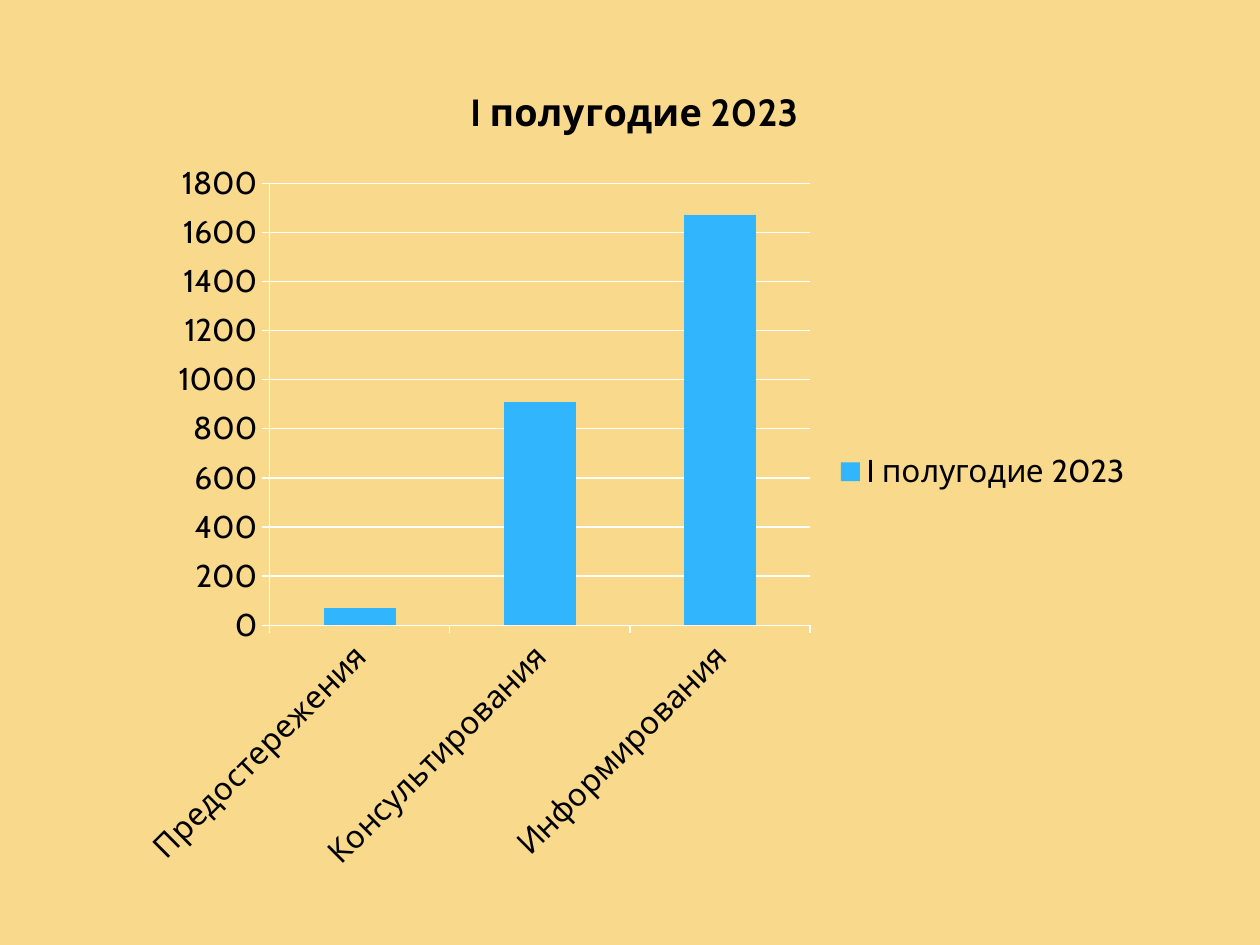
from dataclasses import dataclass

from pptx import Presentation
from pptx.chart.data import CategoryChartData
from pptx.dml.color import RGBColor
from pptx.enum.chart import XL_CHART_TYPE, XL_LEGEND_POSITION, XL_TICK_MARK
from pptx.oxml.ns import qn
from pptx.util import Inches, Pt

COLUMNS = XL_CHART_TYPE.COLUMN_CLUSTERED
LEGEND_RIGHT = XL_LEGEND_POSITION.RIGHT
TICK_OUTSIDE = XL_TICK_MARK.OUTSIDE
TICK_NONE = XL_TICK_MARK.NONE


@dataclass(frozen=True)
class Theme:
    background: RGBColor = RGBColor(0xF9, 0xD9, 0x8C)
    text: RGBColor = RGBColor(0x00, 0x00, 0x00)
    column: RGBColor = RGBColor(0x31, 0xB6, 0xFD)
    line: RGBColor = RGBColor(0xFF, 0xFF, 0xFF)
    font: str = "Cabin"
    body_size: Pt = Pt(18)
    title_size: Pt = Pt(21.6)


THEME = Theme()
PERIOD = "I полугодие 2023"
MEASURES = {"Предостережения": 70, "Консультирования": 910, "Информирования": 1670}


def format_font(font, size, bold=False):
    values = {"name": THEME.font, "size": size, "bold": bold}
    for name, value in values.items():
        setattr(font, name, value)
    font.color.rgb = THEME.text


def format_line(line):
    line.color.rgb = THEME.line
    line.width = Pt(0.75)


def format_axes(chart):
    for axis in (chart.category_axis, chart.value_axis):
        values = {"major_tick_mark": TICK_OUTSIDE, "minor_tick_mark": TICK_NONE}
        for name, value in values.items():
            setattr(axis, name, value)
        format_line(axis.format.line)
        format_font(axis.tick_labels.font, THEME.body_size)

    # Value scale and gridlines
    scale = {"minimum_scale": 0, "maximum_scale": 1800, "major_unit": 200,
             "has_major_gridlines": True}
    for name, value in scale.items():
        setattr(chart.value_axis, name, value)
    format_line(chart.value_axis.major_gridlines.format.line)

    # Category labels slant upwards at 45 degrees
    label_body = chart.category_axis._element.find(qn("c:txPr")).find(qn("a:bodyPr"))
    label_body.set("rot", str(-45 * 60000))
    label_body.set("vert", "horz")


def add_measures_chart(slide, left, top, width, height):
    data = CategoryChartData()
    data.categories = list(MEASURES)
    data.add_series(PERIOD, list(MEASURES.values()))
    chart = slide.shapes.add_chart(COLUMNS, left, top, width, height, data).chart
    format_font(chart.font, THEME.body_size)

    # Title
    chart.has_title = True
    title_frame = chart.chart_title.text_frame
    title_frame.text = PERIOD
    format_font(title_frame.paragraphs[0].runs[0].font, THEME.title_size, bold=True)
    chart.chart_title.include_in_layout = False

    # Legend
    chart.has_legend = True
    chart.legend.position = LEGEND_RIGHT
    chart.legend.include_in_layout = False
    format_font(chart.legend.font, THEME.body_size)

    # Columns
    plot = chart.plots[0]
    plot.gap_width = 150
    plot.vary_by_categories = False
    fill = plot.series[0].format.fill
    fill.solid()
    fill.fore_color.rgb = THEME.column

    format_axes(chart)


def main():
    presentation = Presentation()
    presentation.slide_width = Inches(10)
    presentation.slide_height = Inches(7.5)
    slide = presentation.slides.add_slide(presentation.slide_layouts[6])
    background = slide.background.fill
    background.solid()
    background.fore_color.rgb = THEME.background
    add_measures_chart(slide, Inches(0.98), Inches(0.44), Inches(8.11), Inches(6.61))
    presentation.save("out.pptx")


if __name__ == "__main__":
    main()
